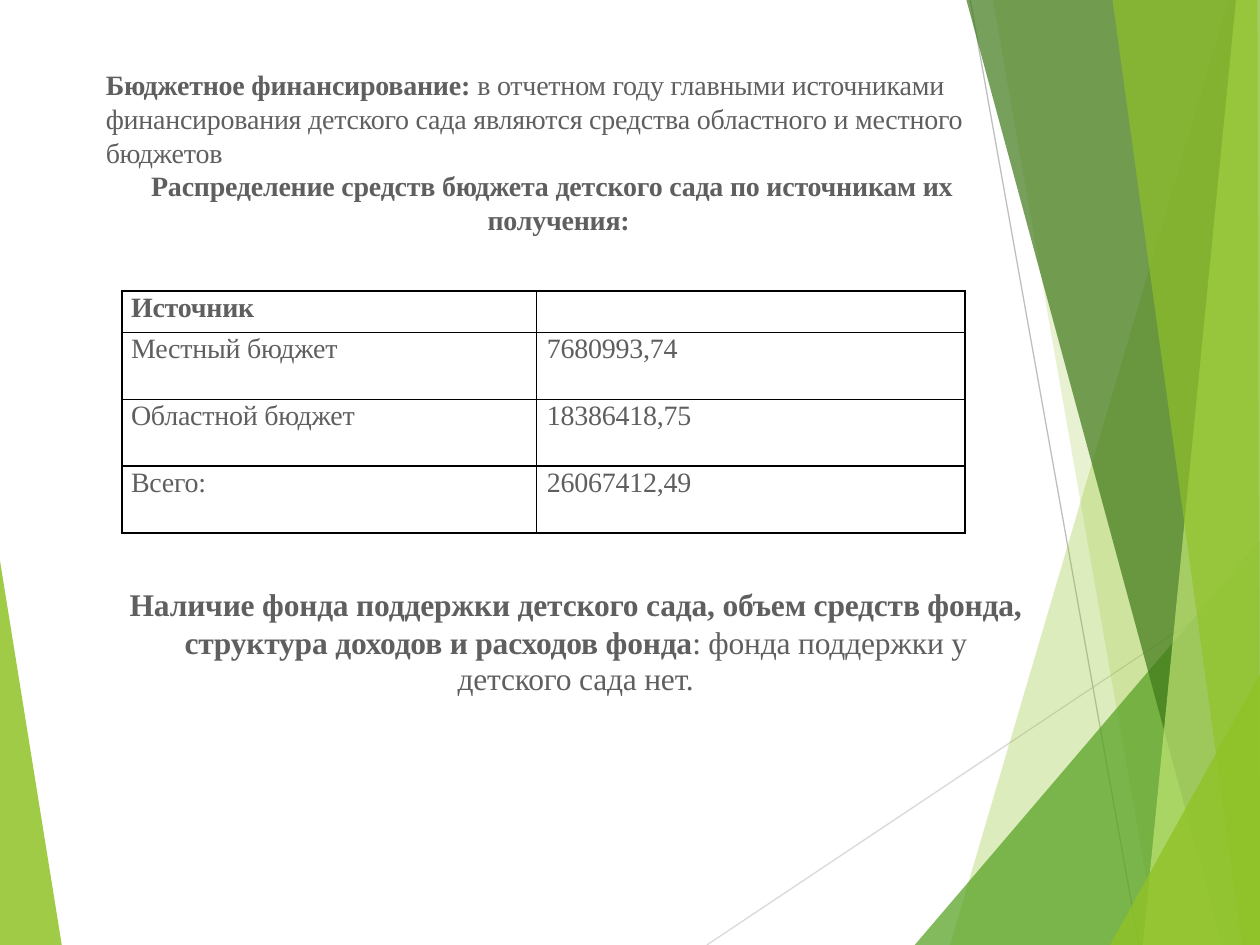
from lxml.etree import SubElement
from pptx import Presentation
from pptx.dml.color import RGBColor
from pptx.enum.shapes import MSO_CONNECTOR as Connector
from pptx.enum.text import PP_ALIGN as Align
from pptx.oxml.ns import qn
from pptx.util import Inches, Pt

COLORS = {
    "lime": "90C226", "green": "54A021", "forest": "3F7819", "pale": "C0E474",
    "light gray": "D9D9D9", "gray": "BFBFBF", "text": "5F5F5F", "border": "000000",
}


def color(name):
    return RGBColor.from_string(COLORS[name])


def write(para, text, size=16, bold=False, spacing=-0.1):
    """Add one formatted span; spacing is in points."""
    span = para.add_run()
    span.text = text
    span.font.name = "Times New Roman"
    span.font.size = Pt(size)
    span.font.bold = bold
    span.font.color.rgb = color("text")
    span.font._element.set("spc", str(round(spacing * 100)))


def indent(para, left=0, first=0, right=0):
    properties = para._p.get_or_add_pPr()
    for name, value in (("marL", left), ("indent", first), ("marR", right)):
        properties.set(name, str(Inches(value)))


class SlideBuilder:
    def __init__(self, deck):
        self.page = deck.slides.add_slide(deck.slide_layouts[6])

    def line(self, start, end, line_color):
        ends = [Inches(value) for value in (*start, *end)]
        line = self.page.shapes.add_connector(Connector.STRAIGHT, *ends)
        line.line.color.rgb = color(line_color)
        line.line.width = Pt(0.75)
        SubElement(line._element.spPr, qn("a:effectLst"))

    def polygon(self, points, fill, opacity):
        start, *rest = [(Inches(x), Inches(y)) for x, y in points]
        outline = self.page.shapes.build_freeform(*start)
        outline.add_line_segments(rest, close=True)
        shape = outline.convert_to_shape()
        shape.shadow.inherit = False
        shape.line.fill.background()
        shape.fill.solid()
        shape.fill.fore_color.rgb = color(fill)
        tint = shape._element.spPr.find(qn("a:solidFill"))[0]
        SubElement(tint, qn("a:alpha"), val=str(opacity * 1000))

    def text(self, left, top, width, height):
        box = self.page.shapes.add_textbox(*map(Inches, (left, top, width, height)))
        frame = box.text_frame
        frame.word_wrap = True
        frame.margin_left = frame.margin_right = frame.margin_bottom = 0
        frame.margin_top = Inches(0.01)
        return frame

    def borders(self, cell):
        properties = cell._tc.get_or_add_tcPr()
        for side in ("lnL", "lnR", "lnT", "lnB"):
            edge = SubElement(properties, qn(f"a:{side}"), w=str(Pt(1)))
            paint = SubElement(edge, qn("a:solidFill"))
            SubElement(paint, qn("a:srgbClr"), val=COLORS["border"])

    def table(self, left, top, widths, heights, rows):
        size = (left, top, sum(widths), sum(heights))
        table = self.page.shapes.add_table(
            len(rows), len(widths), *map(Inches, size)).table
        table.first_row = table.horz_banding = False
        for column, width in zip(table.columns, widths):
            column.width = Inches(width)
        for row, height in zip(table.rows, heights):
            row.height = Inches(height)
        for r, row in enumerate(rows):
            for c, value in enumerate(row):
                cell = table.cell(r, c)
                cell.margin_left = cell.margin_right = cell.margin_bottom = 0
                cell.margin_top = Inches(0.01)
                self.borders(cell)
                cell.fill.background()
                para = cell.text_frame.paragraphs[0]
                indent(para, left=0.07 + 0.01 * c)
                para.space_before = Pt(0.6)
                if value:
                    write(para, value, bold=r == 0)


def main():
    deck = Presentation()
    deck.slide_width, deck.slide_height = Inches(10), Inches(7.5)
    slide = SlideBuilder(deck)

    # Background facets and thin lines
    slide.polygon([(0, 4.45), (0.49, 7.5), (0, 7.5)], "lime", 85)
    slide.line((5.61, 7.5), (10, 4.57), "light gray")
    slide.line((7.7, 0), (9.04, 7.5), "gray")
    facets = [
        ([(9.75, 0), (7.54, 7.5), (10, 7.5), (10, 0)], "lime", 30),
        ([(7.88, 0), (9.19, 7.5), (10, 7.5), (10, 0)], "lime", 20),
        ([(7.26, 7.5), (10, 4.29), (10, 7.5)], "green", 72),
        ([(7.67, 0), (9.7, 7.5), (10, 7.5), (10, 0)], "forest", 70),
        ([(9.81, 0), (9.07, 7.5), (10, 7.5), (10, 0)], "pale", 70),
        ([(8.83, 0), (9.86, 7.5), (10, 7.5), (9.98, 0)], "lime", 65),
        ([(8.81, 7.5), (10, 5.35), (10, 7.5)], "lime", 80),
    ]
    for points, fill, opacity in facets:
        slide.polygon(points, fill, opacity)

    # Budget sources
    slide.table(0.97, 2.31, [3.29, 3.4], [0.33] + [0.53] * 3, [
        ("Источник", ""),
        ("Местный бюджет", "7680993,74"),
        ("Областной бюджет", "18386418,75"),
        ("Всего:", "26067412,49"),
    ])

    # Introduction and table heading
    frame = slide.text(0.83, 0.53, 6.96, 1.36)
    para = frame.paragraphs[0]
    indent(para, left=0.01)
    para.space_before = Pt(0.9)
    write(para, "Бюджетное финансирование: ", bold=True)
    write(para, "в отчетном году главными источниками финансирования детского "
                "сада являются средства областного и местного бюджетов")
    para = frame.add_paragraph()
    indent(para, left=3.04, first=-2.67)
    write(para, "Распределение средств бюджета детского сада "
                "по источникам их получения:", bold=True)

    # Support fund
    frame = slide.text(0.97, 4.63, 7.2, 0.91)
    para = frame.paragraphs[0]
    para.alignment = Align.CENTER
    write(para, "Наличие фонда поддержки детского сада, объем средств фонда,",
          size=18, bold=True)
    para = frame.add_paragraph()
    para.alignment = Align.CENTER
    indent(para, left=0.45, right=0.45)
    para.line_spacing = Pt(20.4)
    para.space_before = Pt(1.7)
    write(para, "структура доходов и расходов фонда", size=18, bold=True)
    write(para, ": фонда поддержки у детского сада нет.", size=18)

    deck.save("out.pptx")


if __name__ == "__main__":
    main()
